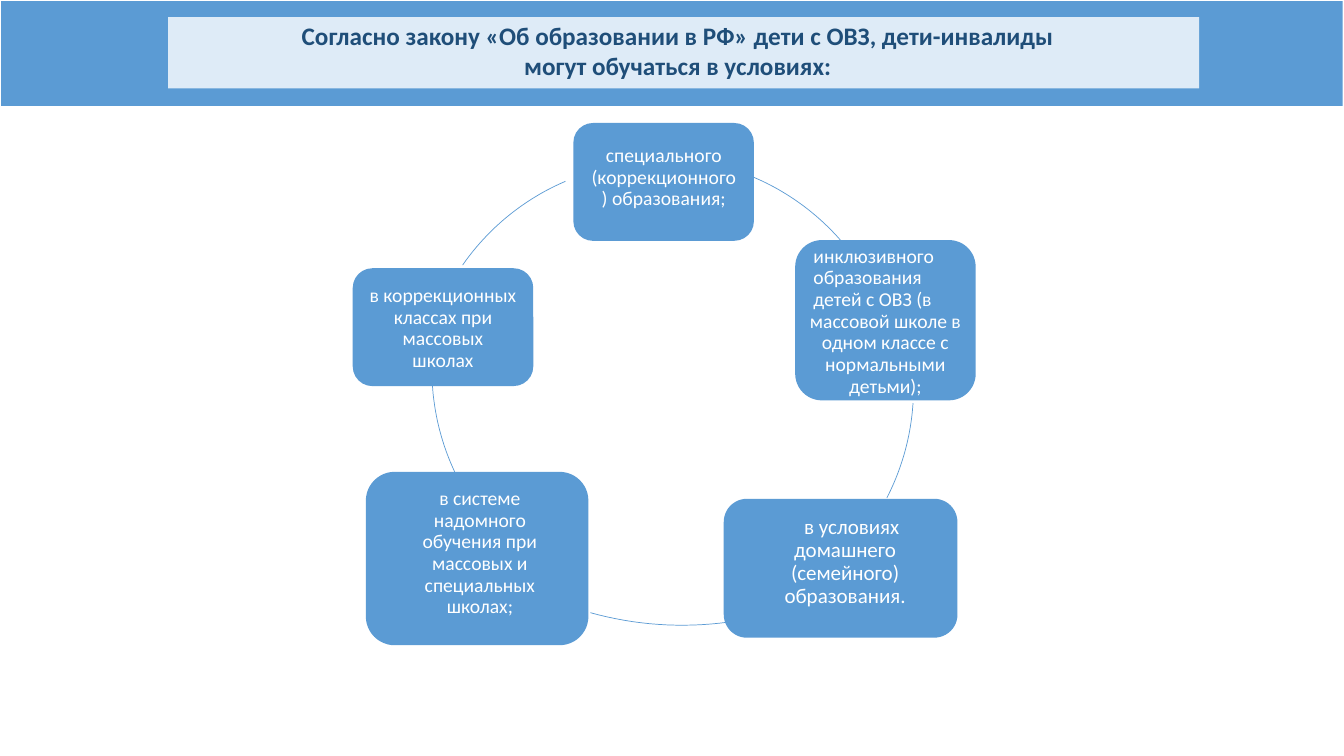
from math import atan2, cos, hypot, pi, sin, sqrt

from lxml import etree
from pptx import Presentation
from pptx.dml.color import RGBColor as Rgb
from pptx.enum.shapes import MSO_SHAPE as Kind
from pptx.enum.text import MSO_ANCHOR as Anchor, PP_ALIGN as Align
from pptx.util import Cm, Pt

COLORS = {"blue": "5B9BD4", "pale": "DEEBF7", "navy": "1F4E79", "white": "FFFFFF"}
FONT = "Calibri"

deck = Presentation()
deck.slide_width, deck.slide_height = Cm(33.87), Cm(19.05)
slide = deck.slides.add_slide(deck.slide_layouts[6])
shapes = slide.shapes


def add_box(kind, area, color):
    box = shapes.add_shape(kind, *[Cm(v) for v in area])
    box.shadow.inherit = False
    box.fill.solid()
    box.fill.fore_color.rgb = Rgb.from_string(COLORS[color])
    box.line.fill.background()
    return box


def style(par, text, size, color, align=Align.CENTER):
    par.text = text
    par.alignment = align
    par.font.name = FONT
    par.font.size = Pt(size)
    par.font.color.rgb = Rgb.from_string(COLORS[color])


# Header band and title
add_box(Kind.RECTANGLE, (0.03, 0.03, 33.81, 2.64), "blue")
title = add_box(Kind.RECTANGLE, (4.24, 0.43, 25.98, 1.8), "pale")
frame = title.text_frame
frame.word_wrap = True
frame.vertical_anchor = Anchor.TOP
frame.margin_left = frame.margin_bottom = 0
frame.margin_top, frame.margin_right = Cm(0.08), Cm(0.3)
lines = [
    "Согласно закону «Об образовании в РФ» дети с ОВЗ, дети-инвалиды",
    "могут обучаться в условиях:",
]
for i, line in enumerate(lines):
    par = frame.add_paragraph() if i else frame.paragraphs[0]
    style(par, line, 18, "navy")
    par.font.bold = True

# Ring of clockwise arcs: start, end, radius
arcs = [
    ((19, 4.47), (21.18, 6.05), 6.07),
    ((23.01, 10.16), (22.35, 12.55), 6.07),
    ((20.04, 15.27), (14.88, 15.44), 8.6),
    ((11.46, 11.89), (10.9, 9.73), 6.07),
    ((11.66, 6.68), (14.25, 4.57), 6.07),
]
STEPS = 24
for (x1, y1), (x2, y2), rad in arcs:
    dx, dy = x2 - x1, y2 - y1
    chord = hypot(dx, dy)
    rise = sqrt(rad ** 2 - chord ** 2 / 4) / chord
    cx, cy = (x1 + x2) / 2 - dy * rise, (y1 + y2) / 2 + dx * rise
    start = atan2(y1 - cy, x1 - cx)
    sweep = (atan2(y2 - cy, x2 - cx) - start) % (2 * pi)
    turns = [start + sweep * n / STEPS for n in range(STEPS + 1)]
    points = [(Cm(cx + rad * cos(t)), Cm(cy + rad * sin(t))) for t in turns]
    path = shapes.build_freeform(*points[0])
    path.add_line_segments(points[1:], close=False)
    arc = path.convert_to_shape()
    arc.shadow.inherit = False
    arc.fill.background()
    arc.line.color.rgb = Rgb.from_string(COLORS["blue"])
    arc.line.width = Pt(0.5)

# Settings: box, label (left, top, width), size, paragraphs (text, align, margin, indent)
MID, LEFT = Align.CENTER, Align.LEFT
nodes = [
    ((14.45, 3.1, 4.55, 2.97), (14.84, 3.58, 3.78), 14,
     [("специального (коррекционного) образования;", MID, 0, 0)]),
    ((20.04, 6.05, 4.55, 4.04), (20.04, 6.12, 4.55), 14,
     [("инклюзивного\vобразования\vдетей с ОВЗ (в", LEFT, 0.46, 0),
      ("массовой школе в одном классе с нормальными детьми);", MID, 0, 0)]),
    ((18.24, 12.57, 5.89, 3.5), (18.8, 12.92, 5), 15,
     [("в условиях домашнего (семейного) образования.", MID, 0, 0.33)]),
    ((9.22, 11.89, 5.61, 4.37), (10.15, 12.22, 3.89), 14,
     [("в системе надомного обучения при массовых и специальных школах;", MID, 0, 0)]),
    ((8.89, 6.76, 4.55, 2.97), (9, 7.11, 4.33), 14,
     [("в коррекционных классах при массовых\vшколах", MID, 0, 0)]),
]
for area, (left, top, width), size, pars in nodes:
    add_box(Kind.ROUNDED_RECTANGLE, area, "blue")
    height = area[1] + area[3] - top
    label = shapes.add_textbox(Cm(left), Cm(top), Cm(width), Cm(height))
    frame = label.text_frame
    frame.word_wrap = True
    frame.margin_left = frame.margin_right = frame.margin_bottom = 0
    frame.margin_top = Cm(0.08)
    for i, (text, align, margin, indent) in enumerate(pars):
        par = frame.add_paragraph() if i else frame.paragraphs[0]
        style(par, text, size, "white", align)
        par.line_spacing = 0.92
        props = par._p.get_or_add_pPr()
        props.set("marL", str(Cm(margin)))
        props.set("indent", str(Cm(indent)))

deck.save("out.pptx")
